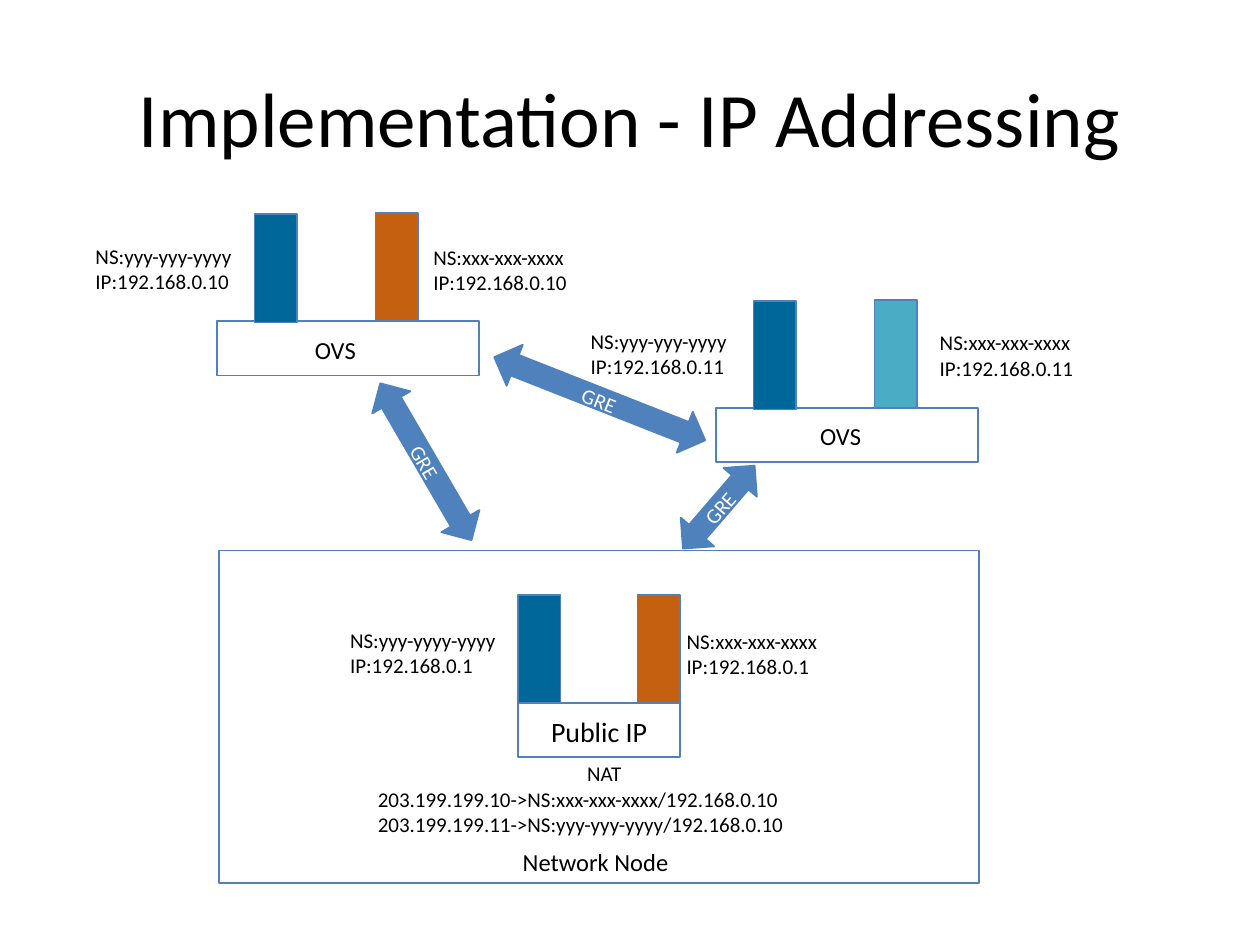
from pptx import Presentation
from pptx.dml.color import RGBColor
from pptx.enum.shapes import MSO_SHAPE
from pptx.enum.text import MSO_ANCHOR, MSO_AUTO_SIZE, PP_ALIGN
from pptx.util import Emu, Pt

EMU_PER_PX = 9144
BLACK, WHITE = "000000", "FFFFFF"
LINE, NAVY, ORANGE, TEAL = "4F81BD", "00679B", "C56011", "4BACC6"


def px(value):
    return Emu(value * EMU_PER_PX)


def color(value):
    return RGBColor.from_string(value)


class SlideBuilder:
    font_name = "Calibri"
    line_width = Pt(1)
    inset = px(4)

    def __init__(self, presentation):
        self.slide = presentation.slides.add_slide(presentation.slide_layouts[5])

    def add_text(self, paragraph, text, size, text_color=BLACK, align=None):
        run = paragraph.add_run()
        run.text = text
        run.font.name = self.font_name
        run.font.size = Pt(size)
        run.font.color.rgb = color(text_color)
        paragraph.alignment = align

    def title(self, text, *box):
        shape = self.slide.shapes.title
        shape.left, shape.top, shape.width, shape.height = map(px, box)
        shape.text_frame.vertical_anchor = MSO_ANCHOR.MIDDLE
        self.add_text(shape.text_frame.paragraphs[0], text, 44, align=PP_ALIGN.CENTER)

    def shape(self, kind, box, fill=None):
        shape = self.slide.shapes.add_shape(kind, *map(px, box))
        shape.shadow.inherit = False
        shape.line.color.rgb = color(LINE)
        shape.line.width = self.line_width
        if fill:
            shape.fill.solid()
            shape.fill.fore_color.rgb = color(fill)
        else:
            shape.fill.background()
        return shape

    def box(self, *box, fill=None):
        return self.shape(MSO_SHAPE.RECTANGLE, box, fill)

    def caption(self, shape, text, size, text_color):
        frame = shape.text_frame
        frame.word_wrap = True
        frame.vertical_anchor = MSO_ANCHOR.MIDDLE
        frame.margin_left = frame.margin_right = self.inset
        frame.margin_top = frame.margin_bottom = self.inset
        paragraph = frame.paragraphs[0]
        paragraph.line_spacing = 1.1
        paragraph.space_before = paragraph.space_after = Pt(2)
        self.add_text(paragraph, text, size, text_color, PP_ALIGN.CENTER)

    def tunnel(self, left, top, width, angle):
        arrow = self.shape(MSO_SHAPE.LEFT_RIGHT_ARROW, (left, top, width, 35), LINE)
        arrow.rotation = angle
        self.caption(arrow, "GRE", 12, WHITE)

    def label(self, box, lines, size, first_align=PP_ALIGN.LEFT):
        frame = self.slide.shapes.add_textbox(*map(px, box)).text_frame
        frame.word_wrap = False
        frame.auto_size = MSO_AUTO_SIZE.SHAPE_TO_FIT_TEXT
        for index, text in enumerate(lines):
            paragraph = frame.add_paragraph() if index else frame.paragraphs[0]
            align = PP_ALIGN.LEFT if index else first_align
            self.add_text(paragraph, text, size, align=align)


def main():
    presentation = Presentation()
    presentation.slide_width, presentation.slide_height = px(1000), px(750)
    builder = SlideBuilder(presentation)
    builder.title("Implementation - IP Addressing", 50, 30, 900, 125)

    for left, top, right_fill in ((172, 255, ORANGE), (568, 324, TEAL)):
        builder.box(left, top, 208, 43)
        builder.box(left + 30, top - 85, 34, 86, fill=NAVY)
        builder.box(left + 126, top - 86, 34, 86, fill=right_fill)

    builder.box(174, 437, 603, 264)
    for left, fill in ((411, NAVY), (506, ORANGE)):
        builder.box(left, 472, 34, 86, fill=fill)
    builder.caption(builder.box(411, 558, 129, 43), "Public IP", 16, BLACK)

    builder.label((405, 667, 145, 34), ["Network Node"], 14)
    for left, top in ((240, 261), (641, 329)):
        builder.label((left, top, 62, 34), ["OVS"], 14)

    addresses = (
        (334, 189, 148, "xxx-xxx-xxxx", 10),
        (736, 257, 148, "xxx-xxx-xxxx", 11),
        (535, 494, 148, "xxx-xxx-xxxx", 1),
        (268, 493, 152, "yyy-yyyy-yyyy", 1),
        (459, 256, 144, "yyy-yyy-yyyy", 11),
        (66, 188, 144, "yyy-yyy-yyyy", 10),
    )
    for left, top, width, namespace, host in addresses:
        lines = [f"NS:{namespace}", f"IP:192.168.0.{host}"]
        builder.label((left, top, width, 50), lines, 12)

    for tunnel in ((386, 299, 180, 21.5), (266, 349, 144, 59.8), (527, 385, 87, 310.8)):
        builder.tunnel(*tunnel)

    translations = [
        "NAT",
        "203.199.199.10->NS:xxx-xxx-xxxx/192.168.0.10",
        "203.199.199.11->NS:yyy-yyy-yyyy/192.168.0.10",
    ]
    builder.label((290, 599, 379, 91), translations, 12, PP_ALIGN.CENTER)
    presentation.save("out.pptx")


if __name__ == "__main__":
    main()
